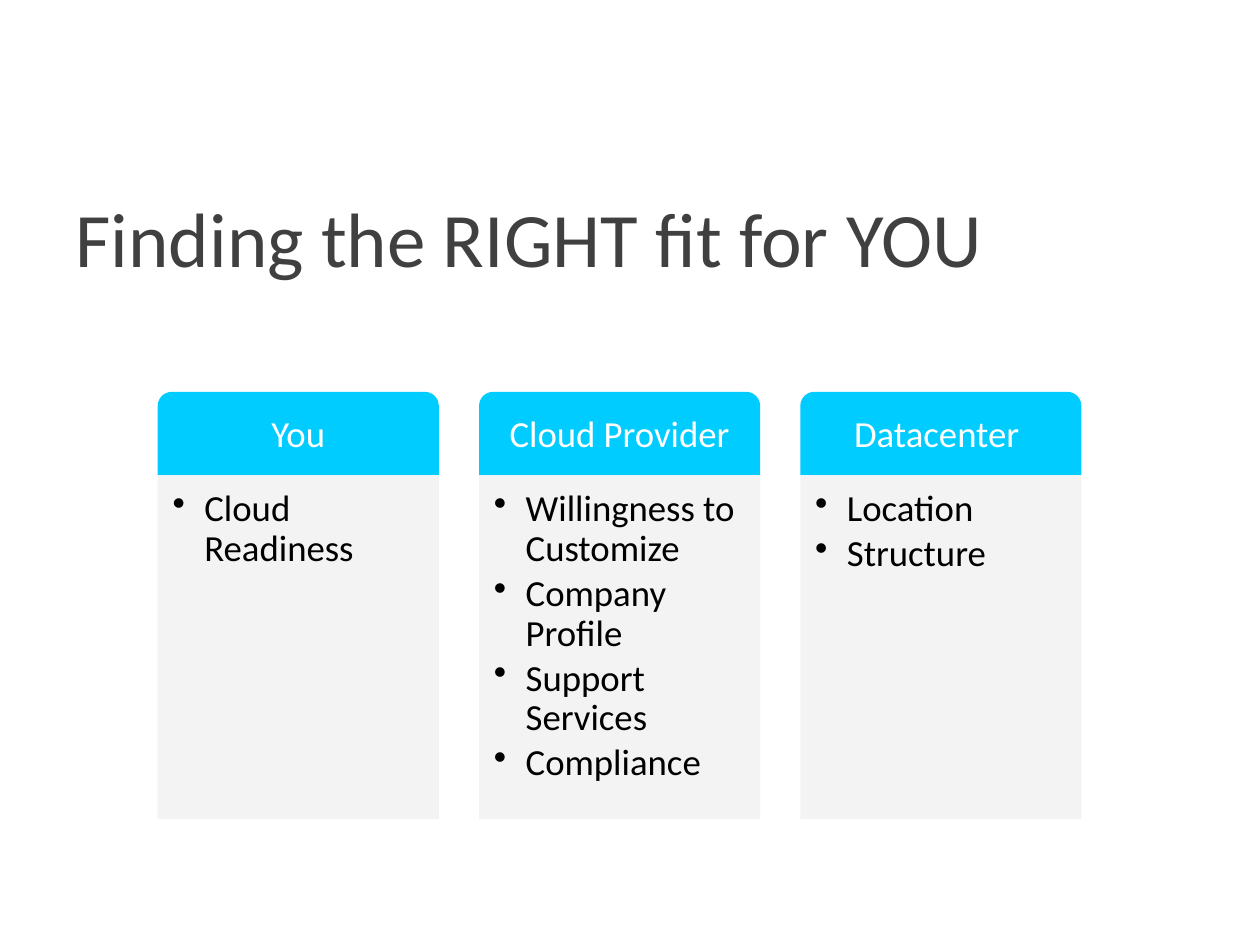
from lxml.etree import SubElement
from pptx import Presentation
from pptx.dml.color import RGBColor
from pptx.enum.shapes import MSO_SHAPE
from pptx.enum.text import MSO_ANCHOR, PP_ALIGN
from pptx.oxml.ns import qn
from pptx.util import Cm, Pt

CYAN = RGBColor(0x00, 0xCC, 0xFF)
PALE = RGBColor(0xF2, 0xF2, 0xF2)
WHITE = RGBColor(0xFF, 0xFF, 0xFF)
BLACK = RGBColor(0x00, 0x00, 0x00)
DARK = RGBColor(0x40, 0x40, 0x40)
FONT = "Calibri"
HEAD_H = Cm(1.68)
INDENT = Cm(0.64)

COLUMNS = [
    ("You", ["Cloud Readiness"]),
    ("Cloud Provider", ["Willingness to Customize", "Company Profile",
                        "Support Services", "Compliance"]),
    ("Datacenter ", ["Location", "Structure"]),
]


def style(p, size, color, align):
    p.alignment = align
    for r in p.runs:
        r.font.name, r.font.size = FONT, Pt(size)
        r.font.color.rgb = color


def add_bullet(p):
    pPr = p._p.get_or_add_pPr()
    pPr.set("marL", str(INDENT))
    pPr.set("indent", str(-INDENT))
    SubElement(pPr, qn("a:buChar"), char="•")


def add_panel(s, kind, box, fill, margins, anchor):
    sp = s.shapes.add_shape(kind, *box)
    sp.shadow.inherit = False
    sp.fill.solid()
    sp.fill.fore_color.rgb = fill
    sp.line.fill.background()
    tf = sp.text_frame
    tf.word_wrap = True
    tf.vertical_anchor = anchor
    tf.margin_left, tf.margin_top, tf.margin_right, tf.margin_bottom = margins
    return sp


def add_title(s, left, top, width, height):
    sp = s.shapes.title
    sp.left, sp.top, sp.width, sp.height = left, top, width, height
    tf = sp.text_frame
    tf.text = "Finding the RIGHT fit for YOU"
    tf.vertical_anchor = MSO_ANCHOR.MIDDLE
    style(tf.paragraphs[0], 44, DARK, PP_ALIGN.LEFT)


def add_column(s, heading, items, left, top, width, height):
    # Heading with rounded top corners
    head = add_panel(s, MSO_SHAPE.ROUND_2_SAME_RECTANGLE,
                     (left, top, width, HEAD_H), CYAN,
                     (Cm(0.4), Cm(0.23), Cm(0.4), Cm(0.23)),
                     MSO_ANCHOR.MIDDLE)
    head.text_frame.text = heading
    p = head.text_frame.paragraphs[0]
    p.line_spacing = 0.9
    style(p, 21, WHITE, PP_ALIGN.CENTER)

    # Slightly transparent body with the bullet list
    body = add_panel(s, MSO_SHAPE.RECTANGLE,
                     (left, top + HEAD_H, width, height - HEAD_H), PALE,
                     (Cm(0.3), Cm(0.3), Cm(0.4), Cm(0.45)), MSO_ANCHOR.TOP)
    color = body.fill._xPr.find(qn("a:solidFill"))[0]
    SubElement(color, qn("a:alpha"), val="90000")
    tf = body.text_frame
    for i, item in enumerate(items):
        p = tf.add_paragraph() if i else tf.paragraphs[0]
        p.text = item
        p.line_spacing = 0.9
        p.space_after = Pt(3)
        add_bullet(p)
        style(p, 21, BLACK, PP_ALIGN.LEFT)


def add_columns(s, left, top, width, height, gap):
    col_w = (width - gap * (len(COLUMNS) - 1)) // len(COLUMNS)
    for i, (heading, items) in enumerate(COLUMNS):
        add_column(s, heading, items, left + i * (col_w + gap), top,
                   col_w, height)


def main():
    prs = Presentation()
    prs.slide_width, prs.slide_height = Cm(25.4), Cm(19.05)
    s = prs.slides.add_slide(prs.slide_layouts[5])
    add_title(s, Cm(1.27), Cm(3.18), Cm(22.86), Cm(3.18))
    add_columns(s, Cm(3.18), Cm(7.9), Cm(18.62), Cm(8.61), Cm(0.81))
    prs.save("out.pptx")


if __name__ == "__main__":
    main()
